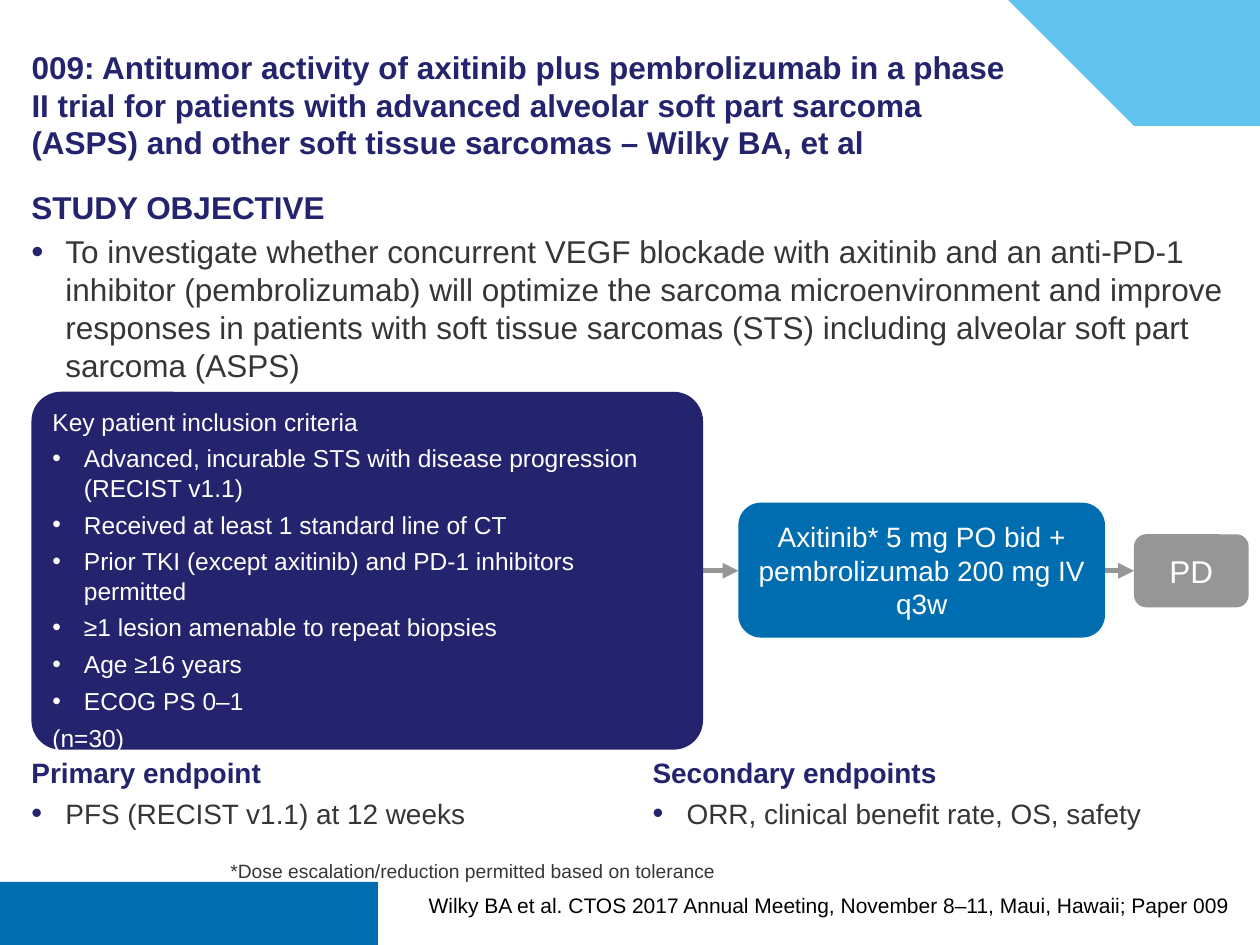
from lxml import etree
from pptx import Presentation
from pptx import util as u
from pptx.dml.color import RGBColor
from pptx.enum import shapes, text
from pptx.oxml.ns import qn

COLORS = {"navy": "23246D", "blue": "006DB0", "sky": "62C4EE", "grey": "969696",
          "ink": "363636", "black": "000000", "white": "FFFFFF"}

TITLE = ("009: Antitumor activity of axitinib plus pembrolizumab in a phase II trial for patients "
         "with advanced alveolar soft part sarcoma (ASPS) and other soft tissue sarcomas – Wilky BA, et al")
CITATION = "Wilky BA et al. CTOS 2017 Annual Meeting, November 8–11, Maui, Hawaii; Paper 009"
FOOTNOTE = "*Dose escalation/reduction permitted based on tolerance"

SECTIONS = [
    ("STUDY OBJECTIVE",
     "To investigate whether concurrent VEGF blockade with axitinib and an anti-PD-1 inhibitor "
     "(pembrolizumab) will optimize the sarcoma microenvironment and improve responses in patients "
     "with soft tissue sarcomas (STS) including alveolar soft part sarcoma (ASPS)",
     18, (0.25, 1.44, 9.5, 5.81)),
    ("Primary endpoint", "PFS (RECIST v1.1) at 12 weeks", 16, (0.25, 5.95, 4.74, 0.77)),
    ("Secondary endpoints", "ORR, clinical benefit rate, OS, safety", 16, (5.18, 5.95, 4.47, 0.92)),
]

CRITERIA_HEAD = "Key patient inclusion criteria"
CRITERIA = [
    "Advanced, incurable STS with disease progression (RECIST v1.1)",
    "Received at least 1 standard line of CT",
    "Prior TKI (except axitinib) and PD-1 inhibitors permitted",
    "≥1 lesion amenable to repeat biopsies",
    "Age ≥16 years",
    "ECOG PS 0–1",
]
PATIENTS = "(n=30)"

STEPS = [
    ("Axitinib* 5 mg PO bid + pembrolizumab 200 mg IV q3w", 16, "blue", (5.86, 3.99, 2.91, 1.07)),
    ("PD", 18, "grey", (9, 4.24, 0.91, 0.58)),
]
ARROWS = [(5.58, 5.86), (8.77, 9)]
ARROW_Y = 4.53

WAVES = [
    ("sky", [(5.15, 0), (10, 0), (10, 1.19), (9.93, 1.12),
             (9.89, 1.09, 9.86, 1.06, 9.82, 1.03), (9.17, 0.62, 8.64, 0.43, 6.08, 0.18),
             (5.77, 0.15, 5.49, 0.09, 5.23, 0.02)]),
    ("blue", [(0.67, 6.77), (1.45, 6.75, 2.18, 7.19, 2.52, 7.47), (2.55, 7.5), (0, 7.5),
              (0, 6.92), (0.09, 6.88), (0.28, 6.81, 0.48, 6.77, 0.67, 6.77)]),
]


def rgb(name):
    return RGBColor.from_string(COLORS[name])


def assign(target, **values):
    for name, value in values.items():
        setattr(target, name, value)


def place(box, at):
    assign(box, **dict(zip(("left", "top", "width", "height"), map(u.Inches, at))))


def setup_frame(box, insets, anchor=text.MSO_ANCHOR.TOP, wrap=True):
    sides = ("margin_left", "margin_top", "margin_right", "margin_bottom")
    assign(box.text_frame, word_wrap=wrap, vertical_anchor=anchor,
           auto_size=text.MSO_AUTO_SIZE.NONE, **dict(zip(sides, map(u.Inches, insets))))


def write(box, words, size, color, bold=False, align=text.PP_ALIGN.LEFT, after=0,
          indent=0, bullet=None):
    frame = box.text_frame
    para = frame.paragraphs[0] if not frame.text else frame.add_paragraph()
    assign(para, alignment=align, space_before=u.Pt(0), space_after=u.Pt(after))
    if indent:
        props = para._p.get_or_add_pPr()
        props.set("marL", str(u.Inches(indent)))
        props.set("indent", str(-u.Inches(indent)))
    if bullet:
        tint, percent = bullet
        holder = etree.SubElement(props, qn("a:buClr"))
        etree.SubElement(holder, qn("a:srgbClr"), val=COLORS[tint])
        etree.SubElement(props, qn("a:buSzPct"), val=str(percent * 1000))
        etree.SubElement(props, qn("a:buFont"), typeface="Arial")
        etree.SubElement(props, qn("a:buChar"), char="•")
    span = para.add_run()
    span.text = words
    assign(span.font, name="Arial", size=u.Pt(size), bold=bold)
    span.font.color.rgb = rgb(color)


def paint(shape, color):
    shape.shadow.inherit = False
    shape.fill.solid()
    shape.fill.fore_color.rgb = rgb(color)
    shape.line.fill.background()


def add_wave(page, color, segments, steps=24):
    points = [segments[0]]
    for segment in segments[1:]:
        if len(segment) == 2:
            points.append(segment)
            continue
        curve = [points[-1], segment[:2], segment[2:4], segment[4:]]
        for step in range(1, steps + 1):
            t = step / steps
            weights = ((1 - t) ** 3, 3 * t * (1 - t) ** 2, 3 * t * t * (1 - t), t ** 3)
            points.append(tuple(sum(w * p[axis] for w, p in zip(weights, curve)) for axis in (0, 1)))
    builder = page.shapes.build_freeform(*points[0], scale=u.Inches(1))
    builder.add_line_segments(points[1:], close=True)
    paint(builder.convert_to_shape(), color)


def add_text(page, at, insets=(0, 0.05, 0, 0.05), **frame):
    box = page.shapes.add_textbox(*map(u.Inches, at))
    setup_frame(box, insets, **frame)
    return box


def add_card(page, at, color, radius, insets, anchor):
    card = page.shapes.add_shape(shapes.MSO_SHAPE.ROUNDED_RECTANGLE, *map(u.Inches, at))
    card.adjustments[0] = radius
    paint(card, color)
    setup_frame(card, insets, anchor)
    return card


def add_arrow(page, start, end):
    arrow = page.shapes.add_connector(shapes.MSO_CONNECTOR.STRAIGHT,
                                      *map(u.Inches, (start, ARROW_Y, end, ARROW_Y)))
    arrow.line.color.rgb = rgb("grey")
    arrow.line.width = u.Pt(3)
    etree.SubElement(arrow.line._get_or_add_ln(), qn("a:tailEnd"), type="triangle")
    etree.SubElement(arrow._element.spPr, qn("a:effectLst"))


def main():
    """Build the study design slide."""
    deck = Presentation()
    assign(deck, slide_width=u.Inches(10), slide_height=u.Inches(7.5))
    page = deck.slides.add_slide(deck.slide_layouts[5])

    for color, segments in WAVES:
        add_wave(page, color, segments)

    title = page.shapes.title
    place(title, (0.25, 0.25, 7.8, 1.03))
    setup_frame(title, (0, 0.05, 0, 0), text.MSO_ANCHOR.BOTTOM)
    write(title, TITLE, 18, "navy", bold=True)

    for heading, body, size, at in SECTIONS:
        box = add_text(page, at)
        write(box, heading, size, "navy", bold=True, after=4)
        write(box, body, size, "ink", after=4, indent=0.27, bullet=("navy", 110))

    citation = add_text(page, (3.35, 7.08, 6.41, 0.2), (0, 0, 0, 0),
                        anchor=text.MSO_ANCHOR.BOTTOM, wrap=False)
    write(citation, CITATION, 12, "black", align=text.PP_ALIGN.RIGHT)

    for words, size, color, at in STEPS:
        card = add_card(page, at, color, 0.167, (0.1, 0, 0.1, 0), text.MSO_ANCHOR.MIDDLE)
        write(card, words, size, "white", align=text.PP_ALIGN.CENTER)
    for start, end in ARROWS:
        add_arrow(page, start, end)

    card = add_card(page, (0.25, 3.11, 5.33, 2.84), "navy", 0.082,
                    (0.1, 0.05, 0.1, 0.05), text.MSO_ANCHOR.TOP)
    write(card, CRITERIA_HEAD, 14, "white", after=4.2)
    for criterion in CRITERIA:
        write(card, criterion, 14, "white", after=4.2, indent=0.25, bullet=("white", 100))
    write(card, PATIENTS, 14, "white", after=4.2, indent=0.32)

    footnote = add_text(page, (1.73, 6.77, 4.07, 0.29), (0.1, 0.05, 0.1, 0.05), wrap=False)
    write(footnote, FOOTNOTE, 11, "ink")

    deck.save("out.pptx")


if __name__ == "__main__":
    main()
